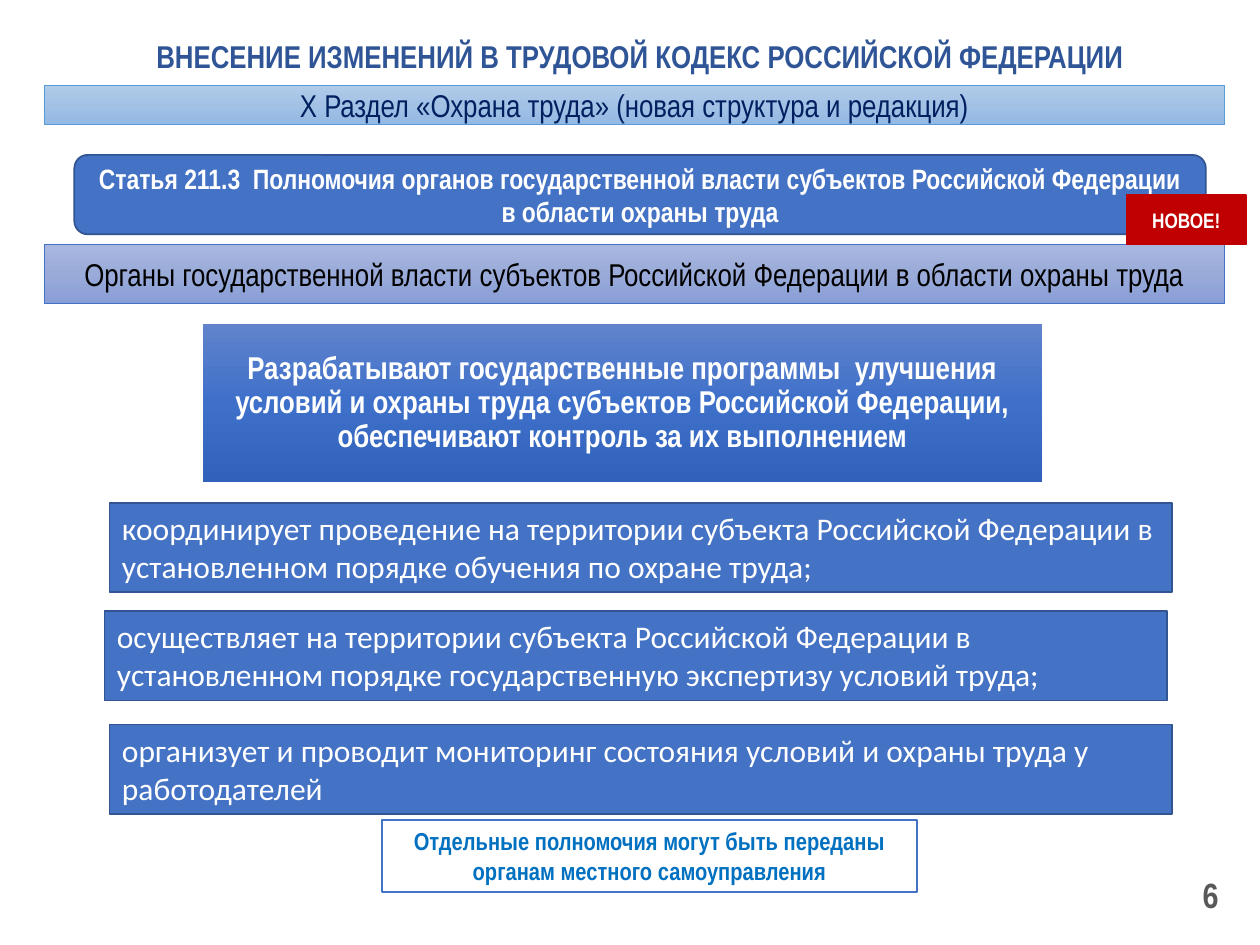
from copy import deepcopy

from pptx import Presentation
from pptx.dml.color import RGBColor
from pptx.enum.shapes import MSO_SHAPE
from pptx.enum.text import MSO_ANCHOR, PP_ALIGN
from pptx.oxml.ns import qn
from pptx.util import Emu, Pt

PX = 9144  # EMU in one px, 100 px to the inch
RECT, ROUND = MSO_SHAPE.RECTANGLE, MSO_SHAPE.ROUNDED_RECTANGLE
LEFT, CENTER, RIGHT = PP_ALIGN.LEFT, PP_ALIGN.CENTER, PP_ALIGN.RIGHT
TOP, MIDDLE = MSO_ANCHOR.TOP, MSO_ANCHOR.MIDDLE

WHITE = RGBColor(0xFF, 0xFF, 0xFF)
BLACK = RGBColor(0x00, 0x00, 0x00)
GRAY = RGBColor(0x59, 0x59, 0x59)
RED = RGBColor(0xC0, 0x00, 0x00)
BLUE = RGBColor(0x44, 0x72, 0xC4)
DARK_BLUE = RGBColor(0x32, 0x54, 0x91)
TITLE_BLUE = RGBColor(0x2F, 0x55, 0x97)
NAVY = RGBColor(0x00, 0x20, 0x60)
NOTE_BLUE = RGBColor(0x00, 0x70, 0xC0)
SKY = RGBColor(0x5B, 0x9B, 0xD5)
SKY_FADE = (RGBColor(0xB1, 0xCB, 0xE9), RGBColor(0xA3, 0xC1, 0xE5), RGBColor(0x93, 0xB9, 0xE4))
LILAC_FADE = (RGBColor(0xA8, 0xB7, 0xDF), RGBColor(0x9A, 0xAB, 0xD9), RGBColor(0x88, 0x9E, 0xD7))
BLUE_FADE = (RGBColor(0x61, 0x83, 0xCB), RGBColor(0x3E, 0x70, 0xCA), RGBColor(0x30, 0x62, 0xBB))

DUTIES = [
    (87, 399, "координирует проведение на территории субъекта Российской Федерации в "
              "установленном порядке обучения по охране труда;"),
    (83, 485, "осуществляет на территории субъекта Российской Федерации в "
              "установленном порядке государственную экспертизу условий труда;"),
    (87, 575, "организует и проводит мониторинг состояния условий и охраны труда у "
              "работодателей"),
]


def px(*lengths):
    return [Emu(n * PX) for n in lengths]


def write(sp, text, size=18, color=WHITE, bold=False, font="Arial Narrow",
          align=CENTER, anchor=MIDDLE, line_spacing=None, margin=None):
    tf = sp.text_frame
    tf.word_wrap = True
    tf.vertical_anchor = anchor
    if margin is not None:
        tf.margin_left = tf.margin_right = tf.margin_top = tf.margin_bottom = px(margin)[0]
    p = tf.paragraphs[0]
    p.alignment = align
    if line_spacing:
        p.line_spacing = line_spacing
    r = p.add_run()
    r.text = text
    r.font.name = font
    r.font.size = Pt(size)
    r.font.bold = bold
    r.font.color.rgb = color


def fade(fill, sp, colors):
    """Fill from top to bottom with three evenly spaced colours."""
    fill.gradient()
    fill.gradient_angle = 270
    stops = sp._element.spPr.find(qn("a:gradFill")).find(qn("a:gsLst"))
    stops.insert(1, deepcopy(stops[0]))
    for i, (stop, color) in enumerate(zip(fill.gradient_stops, colors)):
        stop.position = i / 2
        stop.color.rgb = color


class Deck:
    def __init__(self):
        self.prs = Presentation()
        self.prs.slide_width, self.prs.slide_height = px(1000, 750)
        self.s = self.prs.slides.add_slide(self.prs.slide_layouts[6])

    def label(self, box, text, **style):
        write(self.s.shapes.add_textbox(*px(*box)), text, **style)

    def panel(self, box, text, fill, line=None, line_width=1, shape=RECT, **style):
        sp = self.s.shapes.add_shape(shape, *px(*box))
        sp.shadow.inherit = False
        if isinstance(fill, RGBColor):
            sp.fill.solid()
            sp.fill.fore_color.rgb = fill
        else:
            fade(sp.fill, sp, fill)
        if line is None:
            sp.line.fill.background()
        else:
            sp.line.color.rgb = line
            sp.line.width = Pt(line_width)
        write(sp, text, **style)


def main():
    deck = Deck()
    deck.label((744, 690, 233, 40), "6", size=20, color=GRAY, bold=True, align=RIGHT)
    deck.label((83, 13, 850, 63), "ВНЕСЕНИЕ ИЗМЕНЕНИЙ В ТРУДОВОЙ КОДЕКС РОССИЙСКОЙ ФЕДЕРАЦИИ",
               color=TITLE_BLUE, bold=True)
    deck.panel((59, 123, 898, 63),
               "Статья 211.3  Полномочия органов государственной власти субъектов "
               "Российской Федерации в области охраны труда",
               BLUE, DARK_BLUE, shape=ROUND, size=16, bold=True)
    deck.panel((35, 194, 937, 47),
               "Органы государственной власти субъектов Российской Федерации "
               "в области охраны труда",
               LILAC_FADE, BLUE, 0.5, color=BLACK)
    deck.panel((161, 257, 666, 126),
               "Разрабатывают государственные программы  улучшения условий и охраны труда "
               "субъектов Российской Федерации, обеспечивают контроль за их выполнением",
               BLUE_FADE, bold=True, line_spacing=0.9, margin=7)
    deck.panel((303, 651, 425, 57),
               "Отдельные полномочия могут быть переданы органам местного самоуправления",
               WHITE, BLUE, size=14, color=NOTE_BLUE, bold=True, anchor=TOP)
    deck.panel((894, 155, 95, 39), "НОВОЕ!", RED, RED, size=12, bold=True)
    deck.panel((35, 68, 937, 31), "Х Раздел «Охрана труда» (новая структура и редакция)",
               SKY_FADE, SKY, 0.5, color=NAVY)
    for left, top, text in DUTIES:
        deck.panel((left, top, 843, 71), text, BLUE, DARK_BLUE,
                   font="Calibri", align=LEFT, anchor=TOP)
    deck.prs.save("out.pptx")


if __name__ == "__main__":
    main()
